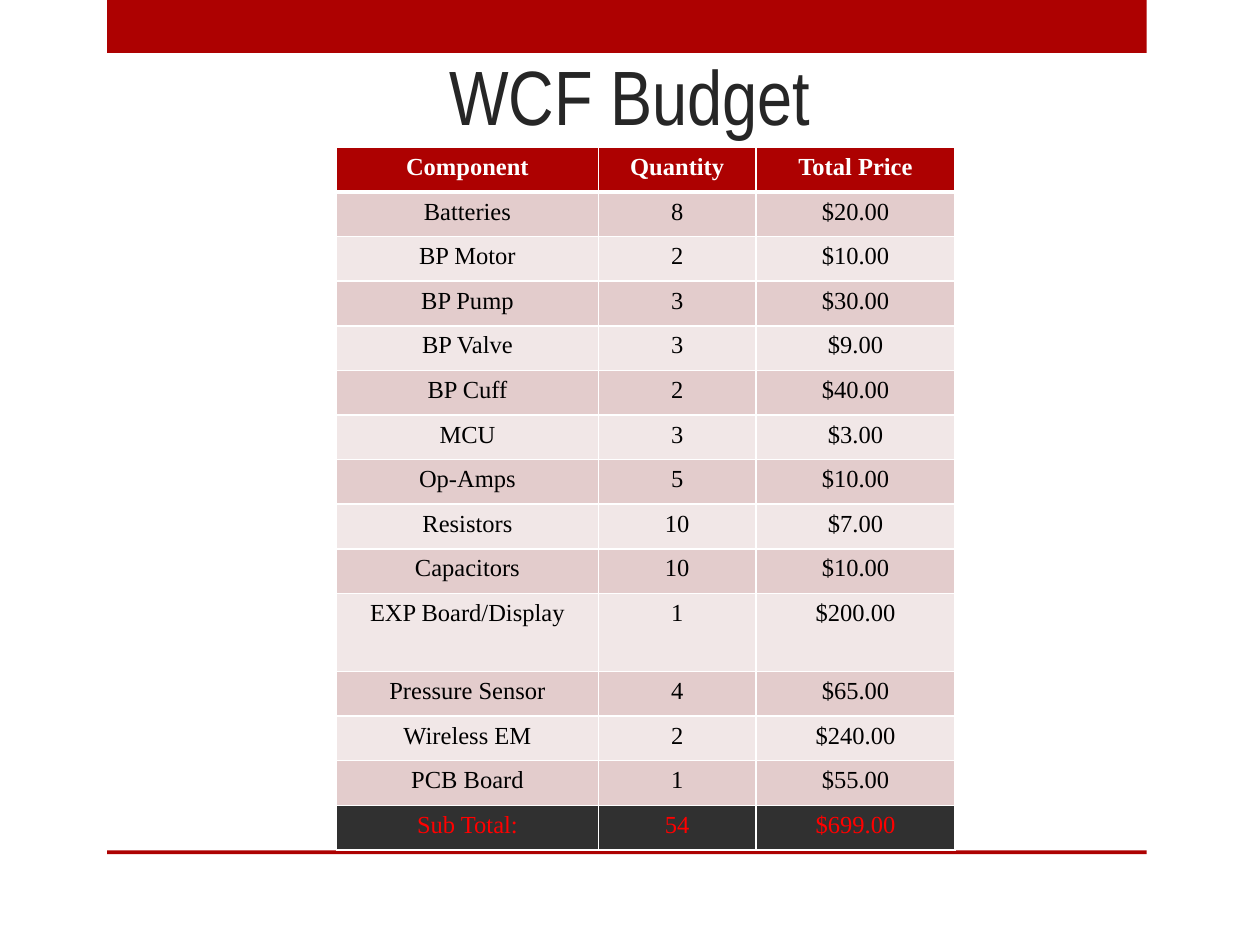
from dataclasses import dataclass

import lxml.etree
import pptx
import pptx.dml.color
import pptx.enum.shapes
import pptx.enum.text
import pptx.oxml.ns
import pptx.slide
import pptx.table
import pptx.text.text
import pptx.util
from pptx.util import Inches


@dataclass(frozen=True)
class Theme:
    red: str = "AD0101"
    title_ink: str = "262626"
    white: str = "FFFFFF"
    black: str = "000000"
    band_dark: str = "E3CCCC"
    band_light: str = "F1E7E7"
    total_fill: str = "303030"
    total_ink: str = "FF0000"
    title_font: str = "Arial Narrow"
    table_font: str = "Times New Roman"
    title_size: int = 44
    table_size: int = 14
    rule_width: int = 1
    header_rule_width: int = 3


@dataclass(frozen=True)
class Bar:
    top: float
    height: float


@dataclass(frozen=True)
class BudgetLine:
    component: str
    quantity: str
    price: str
    height: float = (5.58 - 0.62) / 14


@dataclass(frozen=True)
class RowStyle:
    fill: str
    ink: str
    bold: bool = False
    top_rule: int = 1
    bottom_rule: int = 1


THEME = Theme()
BARS = [Bar(0, 0.42), Bar(6.75, 0.03)]
COLUMN_WIDTHS = [2.08, 1.25, 1.58]
BUDGET = [
    BudgetLine("Component", "Quantity", "Total Price"),
    BudgetLine("Batteries", "8", "$20.00"),
    BudgetLine("BP Motor", "2", "$10.00"),
    BudgetLine("BP Pump", "3", "$30.00"),
    BudgetLine("BP Valve", "3", "$9.00"),
    BudgetLine("BP Cuff", "2", "$40.00"),
    BudgetLine("MCU", "3", "$3.00"),
    BudgetLine("Op-Amps", "5", "$10.00"),
    BudgetLine("Resistors", "10", "$7.00"),
    BudgetLine("Capacitors", "10", "$10.00"),
    BudgetLine("EXP Board/Display", "1", "$200.00", height=0.62),
    BudgetLine("Pressure Sensor", "4", "$65.00"),
    BudgetLine("Wireless EM", "2", "$240.00"),
    BudgetLine("PCB Board", "1", "$55.00"),
    BudgetLine("Sub Total:", "54", "$699.00"),
]


def rgb(value: str) -> pptx.dml.color.RGBColor:
    return pptx.dml.color.RGBColor.from_string(value)


def format_paragraph(paragraph: pptx.text.text._Paragraph, font: str,
                     size: int, ink: str, bold: bool = False) -> None:
    paragraph.alignment = pptx.enum.text.PP_ALIGN.CENTER
    paragraph.font.name = font
    paragraph.font.size = pptx.util.Pt(size)
    paragraph.font.bold = bold
    paragraph.font.color.rgb = rgb(ink)


def draw_bar(slide: pptx.slide.Slide, bar: Bar) -> None:
    band = slide.shapes.add_shape(
        pptx.enum.shapes.MSO_SHAPE.RECTANGLE,
        Inches(0.85), Inches(bar.top), Inches(8.25), Inches(bar.height))
    band.shadow.inherit = False
    band.fill.solid()
    band.fill.fore_color.rgb = rgb(THEME.red)
    band.line.fill.background()


def draw_title(slide: pptx.slide.Slide, wording: str) -> None:
    title = slide.shapes.title
    title.left, title.top = Inches(1), Inches(0.25)
    title.width, title.height = Inches(8), Inches(0.92)
    title.text_frame.text = wording
    title.text_frame.auto_size = pptx.enum.text.MSO_AUTO_SIZE.NONE
    title.text_frame.vertical_anchor = pptx.enum.text.MSO_ANCHOR.BOTTOM
    format_paragraph(title.text_frame.paragraphs[0], THEME.title_font,
                     THEME.title_size, THEME.title_ink)


def rule_cell(cell: pptx.table._Cell, style: RowStyle) -> None:
    qn = pptx.oxml.ns.qn
    properties = cell._tc.get_or_add_tcPr()
    widths = {"a:lnL": THEME.rule_width, "a:lnR": THEME.rule_width,
              "a:lnT": style.top_rule, "a:lnB": style.bottom_rule}
    for tag, width in widths.items():
        rule = lxml.etree.SubElement(properties, qn(tag), w=str(pptx.util.Pt(width)))
        fill = lxml.etree.SubElement(rule, qn("a:solidFill"))
        lxml.etree.SubElement(fill, qn("a:srgbClr"), val=THEME.white)


def row_style(index: int) -> RowStyle:
    if index == 0:
        return RowStyle(THEME.red, THEME.white, bold=True,
                        bottom_rule=THEME.header_rule_width)
    if index == len(BUDGET) - 1:
        return RowStyle(THEME.total_fill, THEME.total_ink)
    band = THEME.band_dark if index % 2 else THEME.band_light
    top_rule = THEME.header_rule_width if index == 1 else THEME.rule_width
    return RowStyle(band, THEME.black, top_rule=top_rule)


def draw_cell(cell: pptx.table._Cell, wording: str, style: RowStyle) -> None:
    cell.text = wording
    cell.margin_left = cell.margin_right = Inches(0.1)
    cell.margin_top = cell.margin_bottom = Inches(0.05)
    format_paragraph(cell.text_frame.paragraphs[0], THEME.table_font,
                     THEME.table_size, style.ink, style.bold)
    rule_cell(cell, style)
    cell.fill.solid()
    cell.fill.fore_color.rgb = rgb(style.fill)


def draw_budget(slide: pptx.slide.Slide) -> None:
    budget = slide.shapes.add_table(
        len(BUDGET), len(COLUMN_WIDTHS), Inches(2.67), Inches(1.17),
        Inches(sum(COLUMN_WIDTHS)), Inches(sum(line.height for line in BUDGET))).table
    for column, width in zip(budget.columns, COLUMN_WIDTHS):
        column.width = Inches(width)
    for index, (row, line) in enumerate(zip(budget.rows, BUDGET)):
        row.height = Inches(line.height)
        for cell, wording in zip(row.cells, (line.component, line.quantity, line.price)):
            draw_cell(cell, wording, row_style(index))


def main() -> None:
    presentation = pptx.Presentation()
    presentation.slide_width, presentation.slide_height = Inches(10), Inches(7.5)
    slide = presentation.slides.add_slide(
        presentation.slide_layouts.get_by_name("Title Only"))
    for bar in BARS:
        draw_bar(slide, bar)
    draw_title(slide, "WCF Budget")
    draw_budget(slide)
    presentation.save("out.pptx")


if __name__ == "__main__":
    main()
